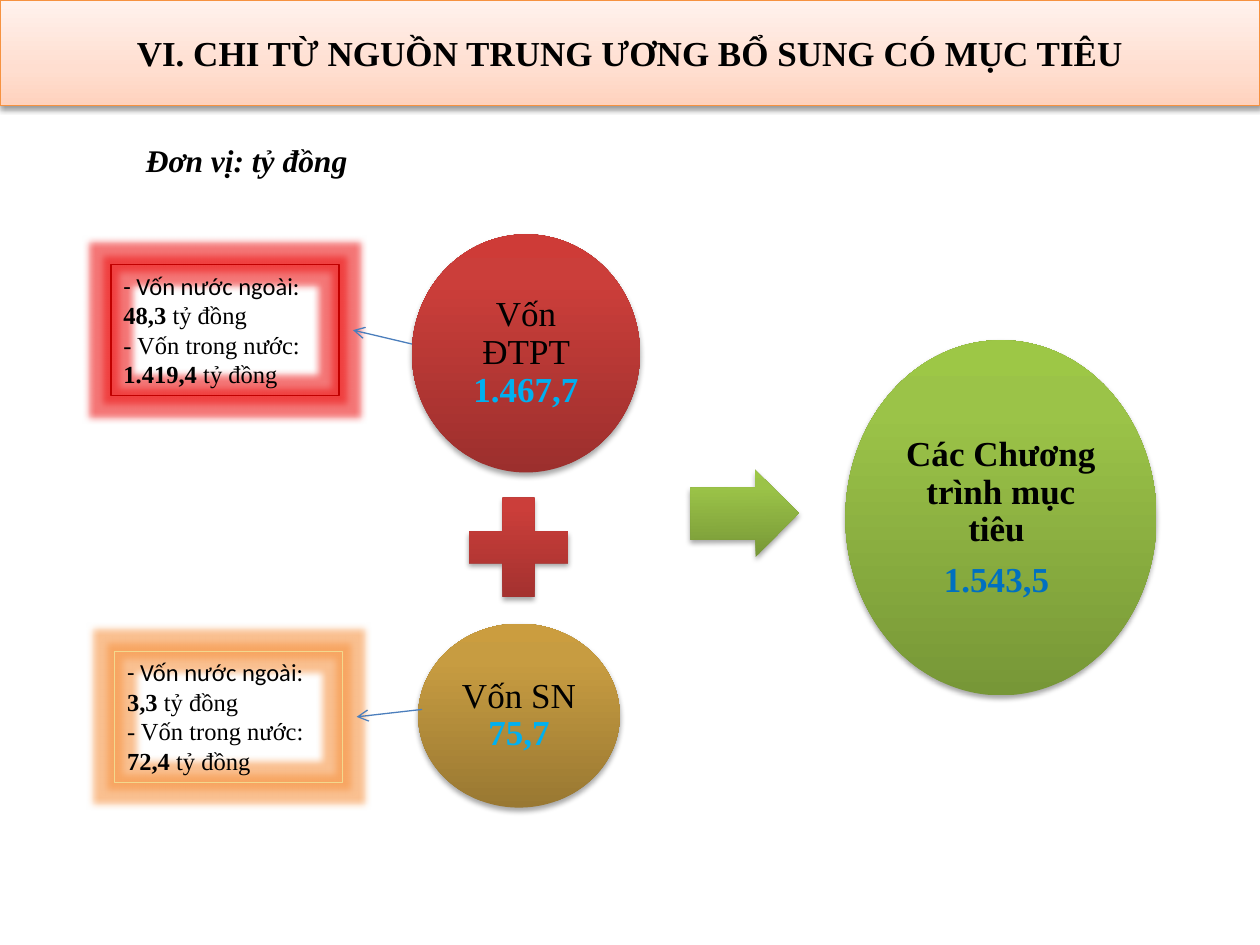
from dataclasses import dataclass

from lxml import etree
from pptx import Presentation
from pptx import util as u
from pptx.dml import color as dml
from pptx.enum import shapes, text
from pptx.oxml import ns


@dataclass(frozen=True)
class Theme:
    serif: str = "Times New Roman"
    sans: str = "Calibri"
    heading: int = 20
    unit: int = 18
    note: int = 14
    ink: str = "000000"
    part_value: str = "00B0F0"
    total_value: str = "0070C0"
    connector: str = "4B7EBC"
    title_line: str = "F69240"
    peach: tuple = ((0, "FFD2BD"), (35, "FFDED0"), (100, "FFF2ED"))
    red: tuple = ((0, "9C2F2D"), (80, "CB3E3A"), (100, "CE3B37"))
    gold: tuple = ((0, "997832"), (80, "C79C41"), (100, "CB9D3F"))
    green: tuple = ((0, "779737"), (80, "9BC348"), (100, "9DC746"))
    red_note: tuple = ("C00000", "EE1C1C")
    gold_note: tuple = ("F3D88D", "F79646")
    glow: int = 8


THEME = Theme()
KIND = shapes.MSO_SHAPE


def rgb(value):
    return dml.RGBColor.from_string(value)


def points(values):
    return [u.Pt(value) for value in values]


def child(parent, tag, **attributes):
    element = etree.SubElement(parent, ns.qn(f"a:{tag}"))
    for name, value in attributes.items():
        element.set(name, str(value))
    return element


def add_effect(shape, tag, color, alpha, **attributes):
    shape.shadow.inherit = False
    effects = shape._element.spPr.find(ns.qn("a:effectLst"))
    effect = child(effects, tag, **attributes)
    child(child(effect, "srgbClr", val=color), "alpha", val=alpha * 1000)


def add_block(slide, kind, box, stops, line=None, alpha=35, distance=1.8):
    shape = slide.shapes.add_shape(kind, *points(box))
    shape.fill.gradient()
    shape.fill.gradient_angle = 90
    stop_list = shape._element.spPr.find(".//" + ns.qn("a:gsLst"))
    for stop in list(stop_list):
        stop_list.remove(stop)
    for position, color in stops:
        child(child(stop_list, "gs", pos=position * 1000), "srgbClr", val=color)
    if line:
        shape.line.color.rgb = rgb(line)
        shape.line.width = u.Pt(0.75)
    else:
        shape.line.fill.background()
    add_effect(shape, "outerShdw", THEME.ink, alpha, blurRad=u.Pt(3.1),
               dist=u.Pt(distance), dir=90 * 60000, rotWithShape=0)
    return shape


def set_margins(frame, margin):
    frame.margin_left = frame.margin_right = u.Pt(margin)
    frame.margin_top = frame.margin_bottom = u.Pt(margin)


def add_run(paragraph, words, size, bold=False, color=THEME.ink, font=THEME.serif):
    run = paragraph.add_run()
    run.text = words
    run.font.size = u.Pt(size)
    run.font.name = font
    run.font.bold = bold
    run.font.color.rgb = rgb(color)
    return run


def add_title(slide, box, words):
    shape = add_block(slide, KIND.RECTANGLE, box, THEME.peach,
                      THEME.title_line, alpha=38, distance=1.6)
    frame = shape.text_frame
    frame.word_wrap = True
    frame.vertical_anchor = text.MSO_ANCHOR.MIDDLE
    set_margins(frame, 0)
    frame.paragraphs[0].alignment = text.PP_ALIGN.CENTER
    add_run(frame.paragraphs[0], words, THEME.heading, bold=True)


def add_unit(slide, box, words):
    frame = slide.shapes.add_textbox(*points(box)).text_frame
    frame.word_wrap = True
    run = add_run(frame.paragraphs[0], words, THEME.unit, bold=True)
    run.font.italic = True


def add_circle(slide, box, stops, paragraphs):
    shape = add_block(slide, KIND.OVAL, box, stops)
    frame = shape.text_frame
    frame.word_wrap = True
    frame.vertical_anchor = text.MSO_ANCHOR.MIDDLE
    set_margins(frame, 2)
    for index, runs in enumerate(paragraphs):
        paragraph = frame.add_paragraph() if index else frame.paragraphs[0]
        paragraph.alignment = text.PP_ALIGN.CENTER
        paragraph.line_spacing = 0.9
        paragraph.space_after = u.Pt(7)
        for words, bold, color in runs:
            add_run(paragraph, words, THEME.heading, bold, color)


def add_pointer(slide, start, end):
    connector = slide.shapes.add_connector(
        shapes.MSO_CONNECTOR.STRAIGHT, *points(start + end))
    connector.line.color.rgb = rgb(THEME.connector)
    connector.line.width = u.Pt(0.75)
    properties = connector._element.spPr
    child(properties.find(ns.qn("a:ln")), "tailEnd", type="arrow")
    child(properties, "effectLst")


def add_note(slide, box, colors, foreign, domestic, pointer_start):
    left, top, width, height = box
    line, glow = colors
    shape = slide.shapes.add_shape(KIND.RECTANGLE, *points(box))
    shape.fill.background()
    shape.line.color.rgb = rgb(line)
    shape.line.width = u.Pt(0.75)
    add_effect(shape, "glow", glow, 60, rad=u.Pt(THEME.glow))
    frame = shape.text_frame
    frame.word_wrap = True
    frame.vertical_anchor = text.MSO_ANCHOR.TOP
    rows = (("- Vốn nước ngoài: ", foreign, THEME.sans),
            ("- Vốn trong nước:  ", domestic, THEME.serif))
    for index, (label, value, font) in enumerate(rows):
        paragraph = frame.add_paragraph() if index else frame.paragraphs[0]
        paragraph.alignment = text.PP_ALIGN.LEFT
        add_run(paragraph, label, THEME.note, font=font)
        add_run(paragraph, f"{value} ", THEME.note, bold=True)
        add_run(paragraph, "tỷ đồng", THEME.note)
    add_pointer(slide, pointer_start, (left + width + THEME.glow, top + height / 2))


def add_arrow(slide, box):
    arrow = add_block(slide, KIND.RIGHT_ARROW, box, THEME.green)
    arrow.adjustments[0] = 0.6
    arrow.adjustments[1] = 0.5
    arrow.rotation = 359.6


def main():
    presentation = Presentation()
    presentation.slide_width, presentation.slide_height = u.Pt(720), u.Pt(540)
    slide = presentation.slides.add_slide(presentation.slide_layouts[6])

    add_title(slide, (0, 0, 720, 60.5), "VI. CHI TỪ NGUỒN TRUNG ƯƠNG BỔ SUNG CÓ MỤC TIÊU")
    add_circle(slide, (235.4, 133.9, 130.3, 136.1), THEME.red,
               [[("Vốn ĐTPT ", False, THEME.ink), ("1.467,7", True, THEME.part_value)]])
    add_block(slide, KIND.MATH_PLUS, (257.8, 274.3, 77, 77), THEME.red)
    add_circle(slide, (239, 356.4, 115.2, 105.1), THEME.gold,
               [[("Vốn SN ", False, THEME.ink), ("75,7", True, THEME.part_value)]])
    add_arrow(slide, (394.6, 268.6, 61.9, 49.7))
    add_circle(slide, (483.1, 194.4, 177.8, 203), THEME.green,
               [[("Các Chương trình mục tiêu ", True, THEME.ink)],
                [("1.543,5 ", True, THEME.total_value)]])
    add_unit(slide, (76.3, 77, 130.3, 28.8), "Đơn vị: tỷ đồng")
    add_note(slide, (63.4, 151.2, 130.3, 74.9), THEME.red_note,
             "48,3", "1.419,4", (235.4, 196.6))
    add_note(slide, (65.5, 372.2, 130.3, 74.9), THEME.gold_note,
             "3,3", "72,4", (241.2, 405.4))
    presentation.save("out.pptx")


if __name__ == "__main__":
    main()
